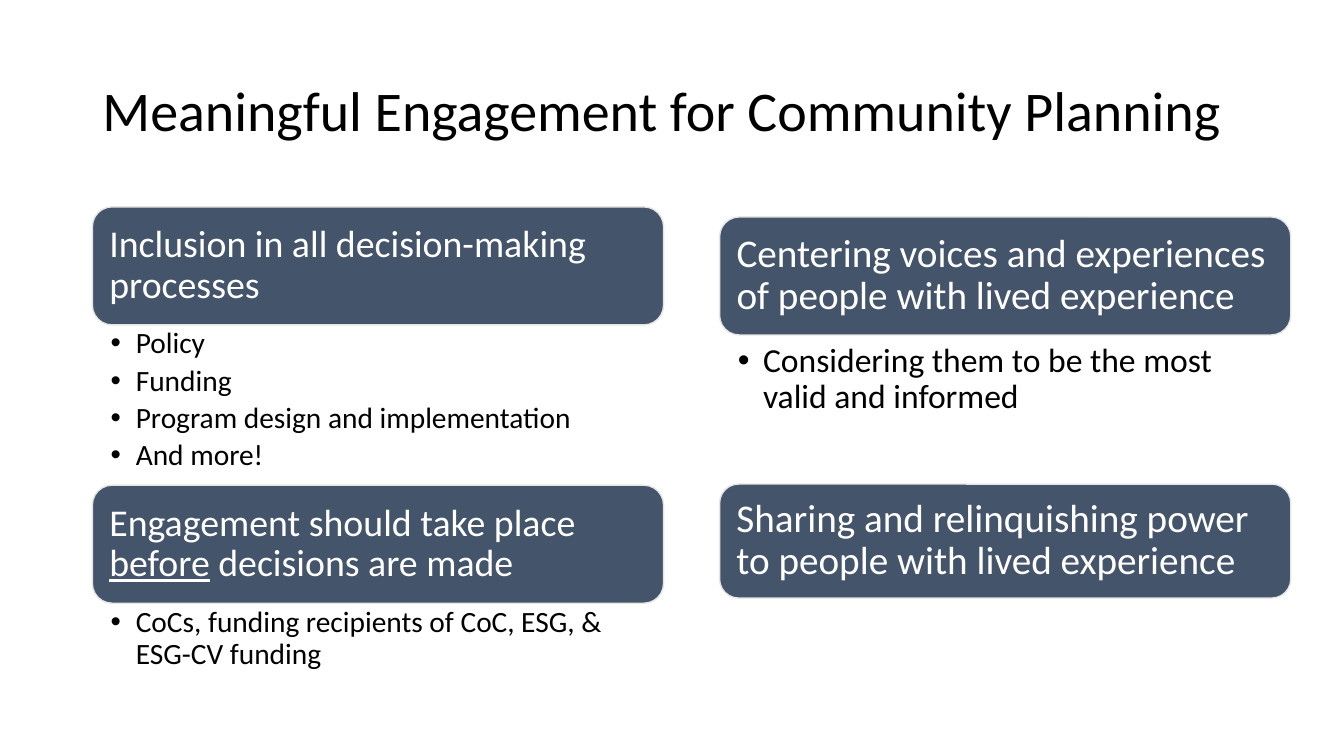
from dataclasses import dataclass

from lxml.etree import SubElement
from pptx import Presentation
from pptx.dml.color import RGBColor
from pptx.enum.shapes import MSO_SHAPE
from pptx.enum.text import MSO_ANCHOR, MSO_AUTO_SIZE, PP_ALIGN
from pptx.oxml.ns import qn
from pptx.util import Pt


@dataclass(frozen=True)
class Theme:
    font: str = "Calibri"
    ink: RGBColor = RGBColor(0x00, 0x00, 0x00)
    card: RGBColor = RGBColor(0x44, 0x54, 0x6A)
    card_line: RGBColor = RGBColor(0xE7, 0xE6, 0xE6)
    card_text: RGBColor = RGBColor(0xFF, 0xFF, 0xFF)
    title_size: int = 40
    left_card_size: int = 27
    right_card_size: int = 28
    left_list_size: int = 21
    right_list_size: int = 24


class SlideBuilder:
    def __init__(self, page, theme):
        self.page = page
        self.theme = theme

    def place(self, shape, left, top, width, height):
        shape.left, shape.top = Pt(left), Pt(top)
        shape.width, shape.height = Pt(width), Pt(height)

    def frame(self, shape, anchor, left, top, right, bottom):
        frame = shape.text_frame
        frame.word_wrap = True
        frame.auto_size = MSO_AUTO_SIZE.NONE
        frame.vertical_anchor = anchor
        frame.margin_left, frame.margin_right = Pt(left), Pt(right)
        frame.margin_top, frame.margin_bottom = Pt(top), Pt(bottom)
        return frame

    def format(self, para, size, color, after=0):
        para.alignment = PP_ALIGN.LEFT
        para.line_spacing = 0.9
        para.space_before, para.space_after = Pt(0), Pt(after)
        font = para.font
        font.name, font.size, font.bold = self.theme.font, Pt(size), False
        font.color.rgb = color

    def title(self, text, *area):
        box = self.page.shapes.title
        self.place(box, *area)
        frame = self.frame(box, MSO_ANCHOR.MIDDLE, 7.2, 3.6, 7.2, 3.6)
        frame.text = text
        self.format(frame.paragraphs[0], self.theme.title_size, self.theme.ink)

    def card(self, spans, size, *area):
        """Draw a rounded heading; spans are (text, underlined) pairs."""
        box = self.page.shapes.add_shape(
            MSO_SHAPE.ROUNDED_RECTANGLE, *(Pt(length) for length in area))
        box.shadow.inherit = False
        box.fill.solid()
        box.fill.fore_color.rgb = self.theme.card
        box.line.color.rgb = self.theme.card_line
        box.line.width = Pt(1)
        para = self.frame(box, MSO_ANCHOR.MIDDLE, 8, 8, 8, 8).paragraphs[0]
        self.format(para, size, self.theme.card_text)
        for text, underlined in spans:
            span = para.add_run()
            span.text = text
            if underlined:
                span.font.underline = True

    def bullets(self, index, items, size, *area):
        box = self.page.placeholders[index]
        self.place(box, *area)
        frame = self.frame(box, MSO_ANCHOR.TOP, 13, 2.7, 14.5, 2.7)
        frame.text = "\n".join(items)
        for para in frame.paragraphs:
            self.format(para, size, self.theme.ink, after=4)
            properties = para._p.get_or_add_pPr()
            properties.set("marL", str(Pt(18)))
            properties.set("indent", str(Pt(-18)))
            bullet = SubElement(properties, qn("a:buChar"))
            bullet.set("char", "•")
            # The bullet must precede the default run properties
            properties.find(qn("a:defRPr")).addprevious(bullet)

    def remove_empty_placeholders(self):
        for box in list(self.page.placeholders):
            if not box.text_frame.text:
                box.element.getparent().remove(box.element)


def main():
    deck = Presentation()
    deck.slide_width, deck.slide_height = Pt(960), Pt(540)
    comparison = deck.slide_layouts[4]
    theme = Theme()
    builder = SlideBuilder(deck.slides.add_slide(comparison), theme)

    left, right, width, card_height = 66, 514, 408, 84.3

    # Title
    builder.title("Meaningful Engagement for Community Planning",
                  left, 28.8, 828, 104.4)

    # Left column: inclusion and timing
    builder.card([("Inclusion in all decision-making processes", False)],
                 theme.left_card_size, left, 147.8, width, card_height)
    builder.bullets(1, ["Policy", "Funding",
                        "Program design and implementation", "And more!"],
                    theme.left_list_size, left, 232, width, 114.5)
    builder.card([("Engagement should take place ", False), ("before", True),
                  (" decisions are made", False)],
                 theme.left_card_size, left, 346.6, width, card_height)
    builder.bullets(2, ["CoCs, funding recipients of CoC, ESG, & ESG-CV funding"],
                    theme.left_list_size, left, 431, width, 52)

    # Right column: lived experience
    builder.card([("Centering voices and experiences of people "
                   "with lived experience", False)],
                 theme.right_card_size, right, 155, width, card_height)
    builder.bullets(3, ["Considering them to be the most valid and informed"],
                    theme.right_list_size, right, 242.6, width, 83.5)
    builder.card([("Sharing and relinquishing power to people "
                   "with lived experience", False)],
                 theme.right_card_size, right, 345.8, width, 81.4)

    builder.remove_empty_placeholders()
    deck.save("out.pptx")


if __name__ == "__main__":
    main()
